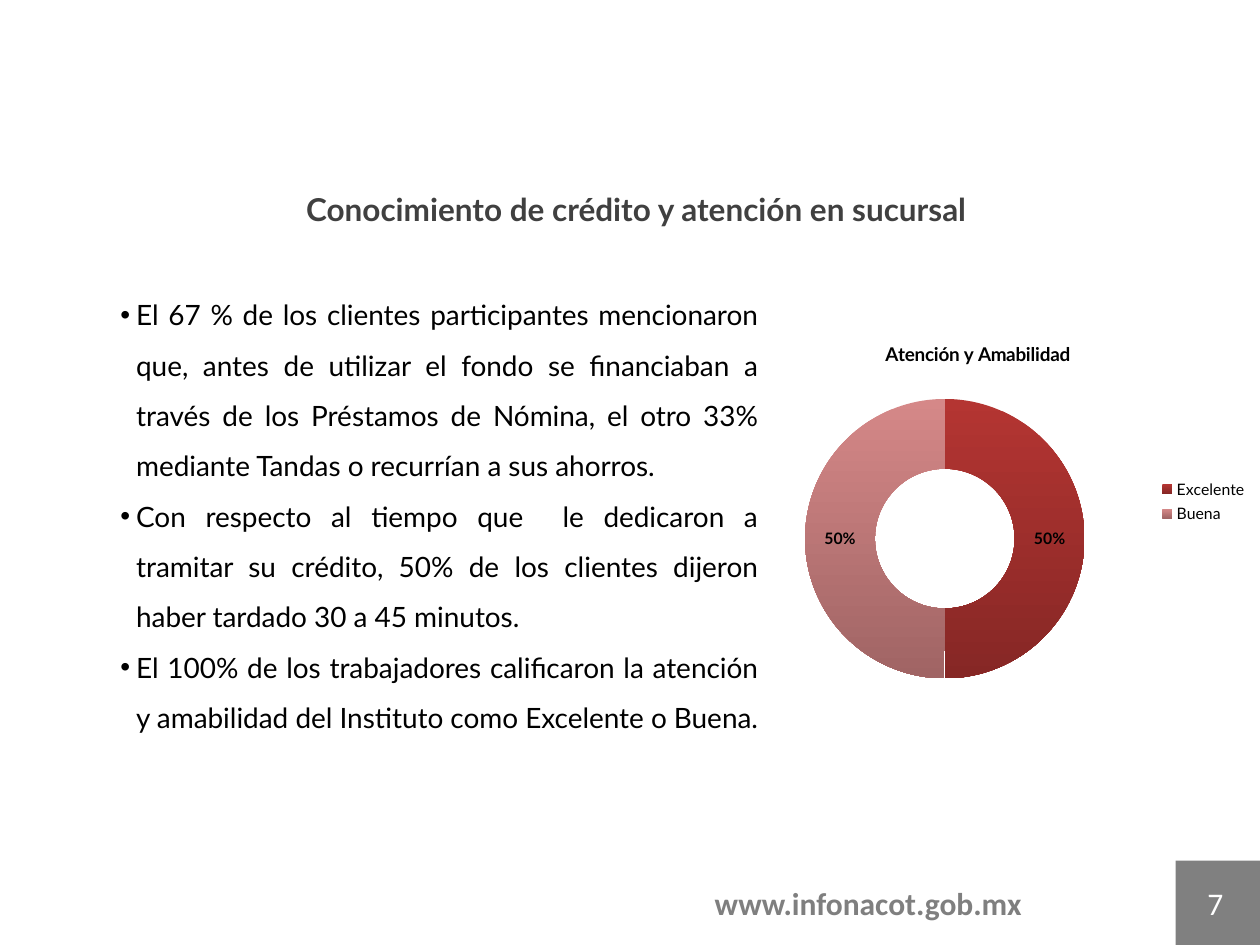
from lxml import etree
from pptx import Presentation
from pptx.chart.data import CategoryChartData
from pptx.dml.color import RGBColor
from pptx.enum.chart import XL_CHART_TYPE, XL_LEGEND_POSITION
from pptx.enum.shapes import MSO_SHAPE
from pptx.enum.text import MSO_ANCHOR, PP_ALIGN
from pptx.oxml import parse_xml
from pptx.oxml.ns import nsdecls, qn
from pptx.util import Pt

DOUGHNUT = XL_CHART_TYPE.DOUGHNUT
LEGEND_RIGHT = XL_LEGEND_POSITION.RIGHT
RECTANGLE = MSO_SHAPE.RECTANGLE
MIDDLE = MSO_ANCHOR.MIDDLE
CENTER, JUSTIFY = PP_ALIGN.CENTER, PP_ALIGN.JUSTIFY

BODY_FONT, FOOTER_FONT = "Lato", "Calibri"
BLACK, WHITE = "000000", "FFFFFF"

FINDINGS = [
    "El 67 % de los clientes participantes mencionaron que, antes de utilizar "
    "el fondo se financiaban a través de los Préstamos de Nómina, el otro 33% "
    "mediante Tandas o recurrían a sus ahorros.",
    "Con respecto al tiempo que  le dedicaron a tramitar su crédito, 50% de los "
    "clientes dijeron haber tardado 30 a 45 minutos.",
    "El 100% de los trabajadores calificaron la atención y amabilidad del "
    "Instituto como Excelente o Buena.",
]
# rating: (share, gradient top, gradient bottom)
RATINGS = {
    "Excelente": (0.5, "B43532", "862725"),
    "Buena": (0.5, "D58888", "A06464"),
}


def rgb(hex_color):
    return RGBColor.from_string(hex_color)


def set_font(font, name, size, color, bold=False):
    font.name = name
    font.size = Pt(size)
    font.color.rgb = rgb(color)
    font.bold = bold


def add_text_frame(slide, box):
    frame = slide.shapes.add_textbox(*map(Pt, box)).text_frame
    frame.word_wrap = True
    return frame


def add_centered_line(slide, box, text, font_name, color):
    line = add_text_frame(slide, box).paragraphs[0]
    line.text = text
    line.alignment = CENTER
    set_font(line.font, font_name, 18, color, bold=True)


def add_bullet(paragraph, indent, hanging):
    properties = paragraph._p.get_or_add_pPr()
    properties.set("marL", str(Pt(indent)))
    properties.set("indent", str(-Pt(hanging)))
    font = etree.SubElement(properties, qn("a:buFont"))
    font.set("typeface", "Arial")
    etree.SubElement(properties, qn("a:buChar")).set("char", "•")


def add_findings(slide, box):
    frame = add_text_frame(slide, box)
    for index, finding in enumerate(FINDINGS):
        paragraph = frame.add_paragraph() if index else frame.paragraphs[0]
        paragraph.text = finding
        paragraph.alignment = JUSTIFY
        paragraph.line_spacing = 1.5
        add_bullet(paragraph, indent=22.5, hanging=9)
        set_font(paragraph.font, BODY_FONT, 16, BLACK)


def set_layout(parent, position, **fractions):
    """Place a chart part by fractions of the chart, at a child index."""
    modes = "".join(f'<c:{axis}Mode val="edge"/>' for axis in "xy")
    values = "".join(f'<c:{key} val="{value}"/>' for key, value in fractions.items())
    target = '<c:layoutTarget val="inner"/>' if "w" in fractions else ""
    for old in parent.findall(qn("c:layout")):
        parent.remove(old)
    parent.insert(position, parse_xml(
        f'<c:layout {nsdecls("c")}><c:manualLayout>{target}{modes}{values}'
        "</c:manualLayout></c:layout>"))


def add_ratings_chart(slide, box):
    data = CategoryChartData(number_format="0%")
    data.categories = list(RATINGS)
    data.add_series("Series 1", [share for share, _, _ in RATINGS.values()])
    chart = slide.shapes.add_chart(DOUGHNUT, *map(Pt, box), data).chart
    set_font(chart.font, BODY_FONT, 9, BLACK)

    chart.has_title = True
    heading = chart.chart_title.text_frame.paragraphs[0]
    heading.text = "Atención y Amabilidad"
    set_font(heading.font, BODY_FONT, 10.8, BLACK, bold=True)
    chart.chart_title.include_in_layout = False
    set_layout(chart.chart_title._element, 1, x=0.31, y=0.06)

    chart.has_legend = True
    chart.legend.position = LEGEND_RIGHT
    chart.legend.include_in_layout = False

    plot = chart.plots[0]
    plot.vary_by_categories = True
    set_layout(chart._chartSpace.chart.plotArea, 0, x=0.17, y=0.22, w=0.51, h=0.76)
    plot._element.find(qn("c:holeSize")).set("val", "50")
    plot.has_data_labels = True
    labels = plot.data_labels
    labels.show_percentage = True
    labels.show_value = False
    set_font(labels.font, BODY_FONT, 9, BLACK, bold=True)

    for index, (_, top_color, bottom_color) in enumerate(RATINGS.values()):
        fill = plot.series[0].points[index].format.fill
        fill.gradient()
        fill.gradient_angle = 270
        for stop, color in zip(fill.gradient_stops, (top_color, bottom_color)):
            stop.color.rgb = rgb(color)


def add_page_number(slide, box, number):
    square = slide.shapes.add_shape(RECTANGLE, *map(Pt, box))
    square.shadow.inherit = False
    square.fill.solid()
    square.fill.fore_color.rgb = rgb("808080")
    square.line.fill.background()
    left, top, width, height = box
    frame = add_text_frame(slide, (left, top, width - 3, height))
    frame.vertical_anchor = MIDDLE
    label = frame.paragraphs[0]
    label.text = str(number)
    label.alignment = CENTER
    set_font(label.font, FOOTER_FONT, 18, WHITE)


def main():
    presentation = Presentation()
    presentation.slide_width, presentation.slide_height = Pt(720), Pt(540)
    slide = presentation.slides.add_slide(presentation.slide_layouts[6])
    add_centered_line(slide, (320.4, 501.8, 351.4, 29), "www.infonacot.gob.mx",
                      FOOTER_FONT, "7F7F7F")
    add_page_number(slide, (671.8, 491.8, 48.2, 48.2), 7)
    add_centered_line(slide, (131, 105.1, 465.1, 29),
                      "Conocimiento de crédito y atención en sucursal",
                      BODY_FONT, "404040")
    add_findings(slide, (48.2, 157, 392.4, 326.9))
    add_ratings_chart(slide, (406.8, 180, 313.2, 213.1))
    presentation.save("out.pptx")


if __name__ == "__main__":
    main()
